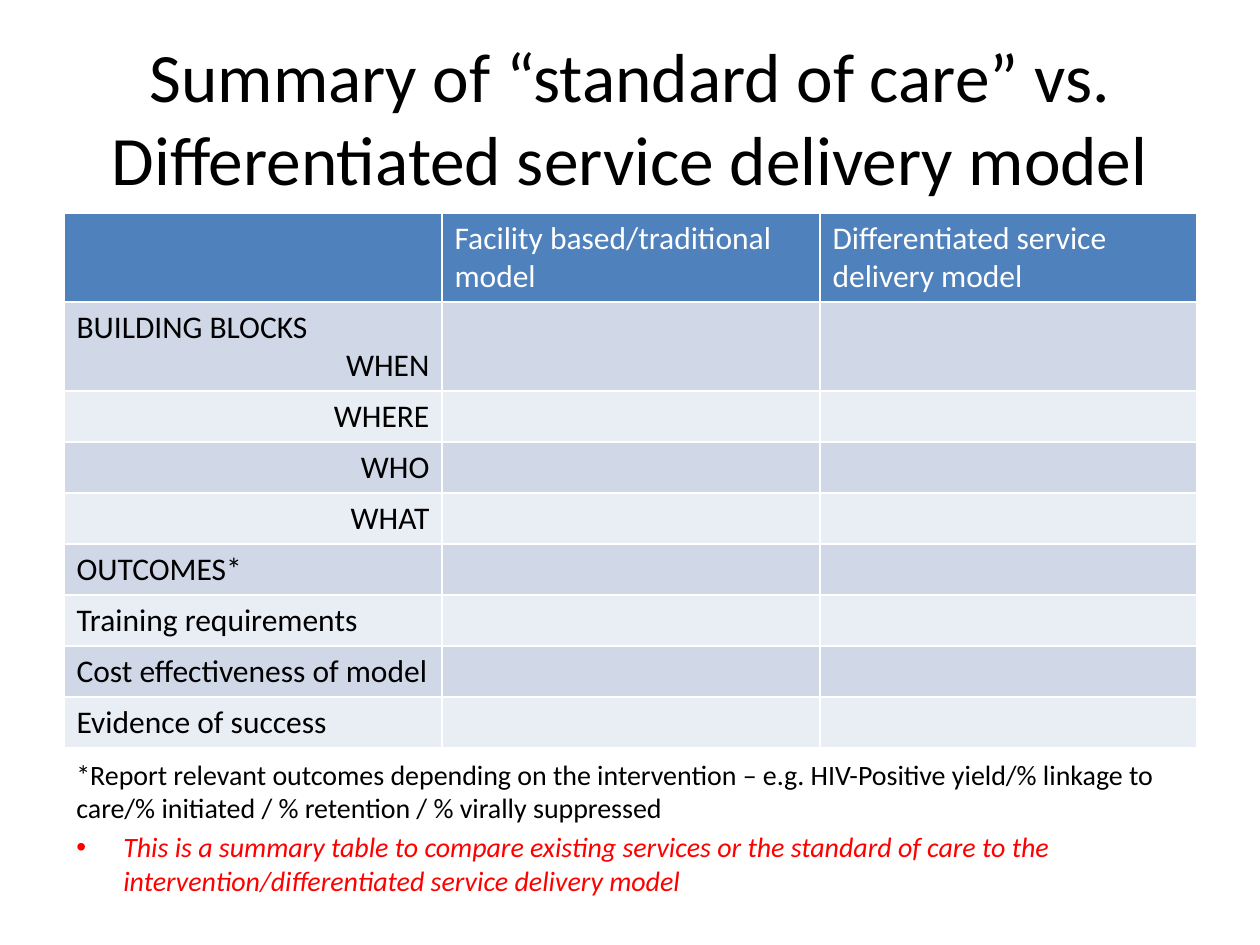
from lxml.etree import SubElement
from pptx import Presentation
from pptx.dml.color import RGBColor
from pptx.enum.text import MSO_ANCHOR, MSO_AUTO_SIZE, PP_ALIGN
from pptx.oxml.ns import qn
from pptx.util import Emu, Pt

FONT = "Calibri"
BLACK, WHITE, RED = "000000", "FFFFFF", "FF0000"
HEADER_FILL = "4F81BD"
BAND_FILLS = ("D0D8E8", "E9EDF4")

HEADINGS = ("", "Facility based/traditional model", "Differentiated service delivery model")
LEFT, RIGHT = PP_ALIGN.LEFT, PP_ALIGN.RIGHT
ROW_LABELS = (
    (("BUILDING BLOCKS", LEFT), ("WHEN", RIGHT)),
    (("WHERE", RIGHT),),
    (("WHO", RIGHT),),
    (("WHAT", RIGHT),),
    (("OUTCOMES*", LEFT),),
    (("Training requirements", LEFT),),
    (("Cost effectiveness of model", LEFT),),
    (("Evidence of success", LEFT),),
)
COLUMN_WIDTHS = (378, 378, 377)
TALL_ROW, SHORT_ROW = 89, 51


def px(length):
    return Emu(round(length * 914400 / 126))


def color(hex_code):
    return RGBColor.from_string(hex_code)


def add_run(paragraph, text, size, hex_code, italic=None):
    run = paragraph.add_run()
    run.text = text
    run.font.name = FONT
    run.font.size = Pt(size)
    run.font.color.rgb = color(hex_code)
    run.font.italic = italic


def add_bullet(paragraph, indent):
    """Give the paragraph a round bullet with a hanging indent."""
    properties = paragraph._p.get_or_add_pPr()
    properties.set("marL", str(px(indent)))
    properties.set("indent", str(-px(indent)))
    SubElement(properties, qn("a:buFont"), typeface="Arial")
    SubElement(properties, qn("a:buChar"), char="•")


def set_title(slide, text):
    title = slide.shapes.title
    title.left, title.top, title.width, title.height = px(63), px(38), px(1134), px(157)
    frame = title.text_frame
    frame.auto_size = MSO_AUTO_SIZE.NONE
    frame.word_wrap = True
    frame.vertical_anchor = MSO_ANCHOR.MIDDLE
    paragraph = frame.paragraphs[0]
    paragraph.alignment = PP_ALIGN.CENTER
    add_run(paragraph, text, 39.6, BLACK)


def fill_cell(cell, fill, lines, text_color):
    """Colour the cell and write each (text, alignment) line as a paragraph."""
    cell.fill.solid()
    cell.fill.fore_color.rgb = color(fill)
    frame = cell.text_frame
    for index, (text, alignment) in enumerate(lines):
        paragraph = frame.add_paragraph() if index else frame.paragraphs[0]
        paragraph.alignment = alignment
        if text:
            add_run(paragraph, text, 18, text_color)


def add_comparison_table(slide):
    heights = [TALL_ROW] * 2 + [SHORT_ROW] * (len(ROW_LABELS) - 1)
    table = slide.shapes.add_table(
        len(heights), len(COLUMN_WIDTHS),
        px(64), px(213), px(sum(COLUMN_WIDTHS)), px(sum(heights)),
    ).table
    for column, width in zip(table.columns, COLUMN_WIDTHS):
        column.width = px(width)
    for row, height in zip(table.rows, heights):
        row.height = px(height)
    for column, heading in enumerate(HEADINGS):
        fill_cell(table.cell(0, column), HEADER_FILL, [(heading, LEFT)], WHITE)
    for row, lines in enumerate(ROW_LABELS):
        for column in range(len(COLUMN_WIDTHS)):
            fill_cell(table.cell(row + 1, column), BAND_FILLS[row % 2],
                      () if column else lines, BLACK)


def add_notes_below_table(slide):
    frame = slide.shapes.add_textbox(px(64), px(751), px(1134), px(624)).text_frame
    frame.word_wrap = True
    footnote, guidance = frame.paragraphs[0], frame.add_paragraph()
    for paragraph in (footnote, guidance):
        paragraph.space_before = Pt(3.2)
    add_run(footnote, "*Report relevant outcomes depending on the intervention – e.g. "
            "HIV-Positive yield/% linkage to care/% initiated / % retention / "
            "% virally suppressed", 16, BLACK)
    add_bullet(guidance, 47)
    add_run(guidance, "This is a summary table to compare existing services or the standard "
            "of care to the intervention/differentiated service delivery model",
            16, RED, italic=True)


def main():
    presentation = Presentation()
    presentation.slide_width, presentation.slide_height = px(1260), px(945)
    slide = presentation.slides.add_slide(presentation.slide_layouts[5])
    set_title(slide, "Summary of “standard of care” vs. Differentiated service delivery model")
    add_notes_below_table(slide)
    add_comparison_table(slide)
    presentation.save("out.pptx")


if __name__ == "__main__":
    main()
